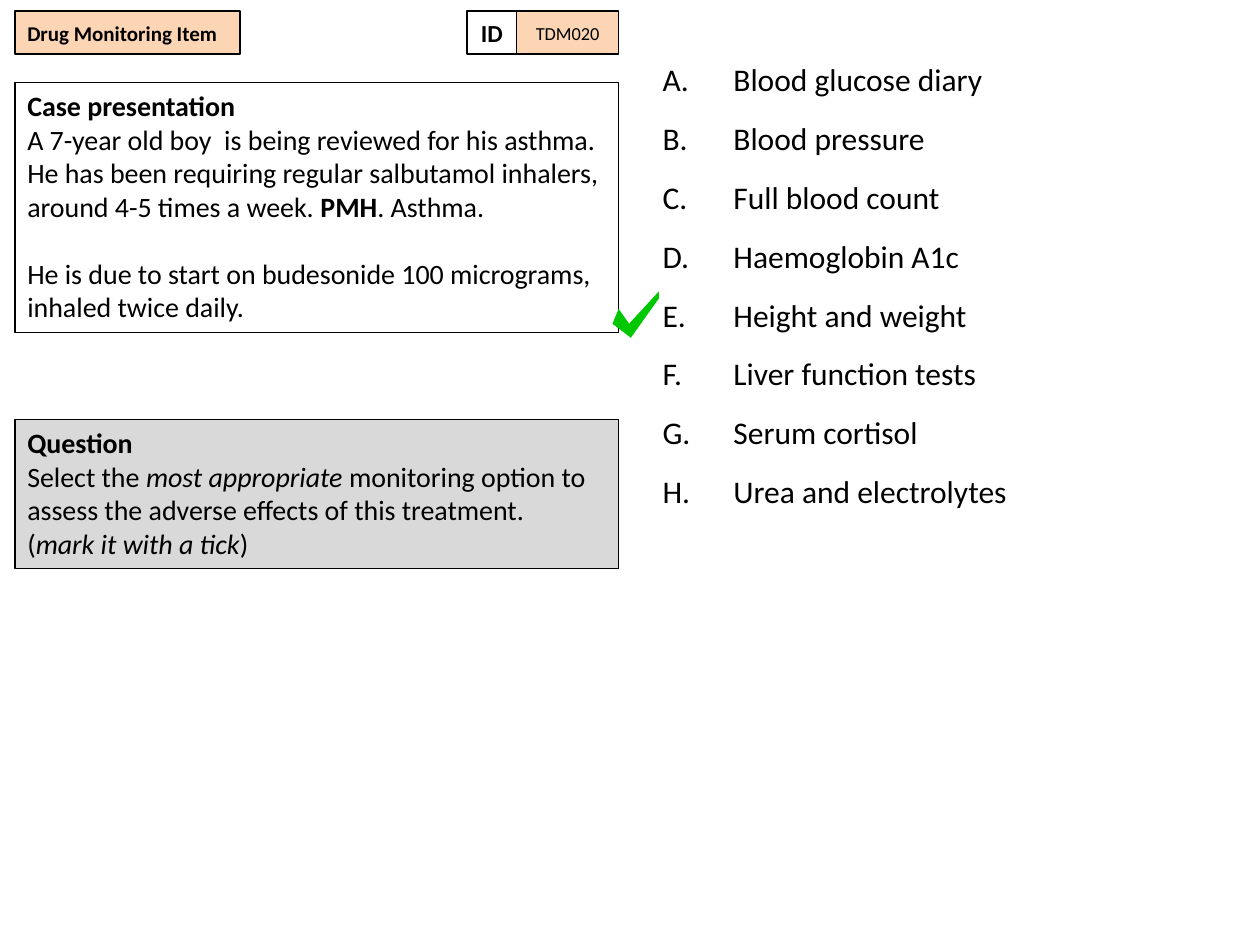
from dataclasses import dataclass

from lxml import etree
from pptx import Presentation
from pptx.dml.color import RGBColor
from pptx.enum.shapes import MSO_SHAPE
from pptx.enum.text import MSO_ANCHOR, MSO_AUTO_SIZE, PP_ALIGN
from pptx.oxml.ns import qn
from pptx.shapes.autoshape import Shape
from pptx.slide import Slide
from pptx.text.text import TextFrame
from pptx.util import Pt

RECTANGLE = MSO_SHAPE.RECTANGLE
TOP, MIDDLE = MSO_ANCHOR.TOP, MSO_ANCHOR.MIDDLE
LEFT, CENTER = PP_ALIGN.LEFT, PP_ALIGN.CENTER
GROW = MSO_AUTO_SIZE.SHAPE_TO_FIT_TEXT

FONT = "Calibri"
BLACK, PEACH, GREY, GREEN = "000000", "FCD5B5", "D9D9D9", "00C800"
MARGIN, COLUMN_WIDTH = 8.5, 345
HEADER_TOP, HEADER_HEIGHT = 6.5, 24.5
HANGING = 40.5


@dataclass(frozen=True)
class Span:
    text: str
    bold: bool = False
    italic: bool = False


@dataclass(frozen=True)
class Para:
    spans: tuple[Span, ...]
    space_before: float = 0


@dataclass(frozen=True)
class Panel:
    left: float
    top: float
    width: float
    height: float
    paras: tuple[Para, ...]
    size: float
    fill: str | None = None
    line_width: float = 1
    align: PP_ALIGN = LEFT
    anchor: MSO_ANCHOR = MIDDLE
    grow: bool = False


HEADERS = (
    Panel(MARGIN, HEADER_TOP, 128.5, HEADER_HEIGHT,
          (Para((Span("Drug Monitoring Item", bold=True),)),), 12, PEACH),
    Panel(295.2, HEADER_TOP, 58.3, HEADER_HEIGHT,
          (Para((Span("TDM020"),)),), 10.5, PEACH, align=CENTER),
    Panel(267, HEADER_TOP, 28.2, HEADER_HEIGHT,
          (Para((Span("ID", bold=True),)),), 14, align=CENTER),
)
CASE = Panel(MARGIN, 47, COLUMN_WIDTH, 143, (
    Para((Span("Case presentation", bold=True),)),
    Para((
        Span("A 7-year old boy  is being reviewed for his asthma. He has been requiring "
             "regular salbutamol inhalers, around 4-5 times a week. "),
        Span("PMH", bold=True),
        Span(". Asthma."),
    )),
    Para((Span("He is due to start on budesonide 100 micrograms, inhaled twice daily."),),
         space_before=19.2),
), 16, line_width=0.75, anchor=TOP, grow=True)
QUESTION = Panel(MARGIN, 239.75, COLUMN_WIDTH, 85, (
    Para((Span("Question", bold=True),)),
    Para((
        Span("Select the "),
        Span("most appropriate ", italic=True),
        Span("monitoring option to assess the adverse effects of this treatment."),
    )),
    Para((Span("("), Span("mark it with a tick", italic=True), Span(")"))),
), 16, GREY, line_width=0.75, anchor=TOP, grow=True)
OPTIONS = (
    "Blood glucose diary", "Blood pressure", "Full blood count", "Haemoglobin A1c",
    "Height and weight", "Liver function tests", "Serum cortisol", "Urea and electrolytes",
)
TICK = ((353.5, 176.5), (350, 185), (360.5, 193), (376.5, 170.5), (376.5, 166.5), (359.5, 185))


def color(value: str) -> RGBColor:
    """Turn a hex string into a colour."""
    return RGBColor.from_string(value)


def paint(shape: Shape, fill: str | None) -> None:
    """Set the fill of a shape and remove its shadow."""
    shape.shadow.inherit = False
    if fill is None:
        shape.fill.background()
    else:
        shape.fill.solid()
        shape.fill.fore_color.rgb = color(fill)


def write(frame: TextFrame, paras: tuple[Para, ...], size: float, align: PP_ALIGN) -> None:
    """Write paragraphs run by run into a text frame."""
    frame.word_wrap = True
    for index, para in enumerate(paras):
        paragraph = frame.add_paragraph() if index else frame.paragraphs[0]
        paragraph.alignment = align
        paragraph.space_before = Pt(para.space_before)
        for span in para.spans:
            run = paragraph.add_run()
            run.text = span.text
            run.font.name = FONT
            run.font.size = Pt(size)
            run.font.bold = span.bold
            run.font.italic = span.italic
            run.font.color.rgb = color(BLACK)


def draw_panel(page: Slide, panel: Panel) -> None:
    """Draw an outlined rectangle with its text."""
    box = page.shapes.add_shape(
        RECTANGLE, Pt(panel.left), Pt(panel.top), Pt(panel.width), Pt(panel.height))
    paint(box, panel.fill)
    box.line.color.rgb = color(BLACK)
    box.line.width = Pt(panel.line_width)
    box.text_frame.vertical_anchor = panel.anchor
    write(box.text_frame, panel.paras, panel.size, panel.align)
    if panel.grow:
        box.text_frame.auto_size = GROW


def draw_options(page: Slide, options: tuple[str, ...]) -> None:
    """Draw the lettered list of answers."""
    box = page.shapes.add_textbox(Pt(371.5), Pt(31), Pt(289.5), Pt(451.5))
    paras = tuple(Para((Span(option),), space_before=12) for option in options)
    write(box.text_frame, paras, 18, LEFT)
    for paragraph in box.text_frame.paragraphs:
        properties = paragraph._p.get_or_add_pPr()
        properties.set("marL", str(Pt(HANGING)))
        properties.set("indent", str(-Pt(HANGING)))
        etree.SubElement(properties, qn("a:buFont"), typeface=FONT)
        etree.SubElement(properties, qn("a:buAutoNum"), type="alphaUcPeriod")


def draw_tick(page: Slide, points: tuple[tuple[float, float], ...]) -> None:
    """Draw the tick that marks the answer."""
    start, *rest = [(Pt(x), Pt(y)) for x, y in points]
    builder = page.shapes.build_freeform(*start)
    builder.add_line_segments(rest, close=True)
    tick = builder.convert_to_shape()
    paint(tick, GREEN)
    tick.line.fill.background()


def main() -> None:
    """Build the drug monitoring slide."""
    deck = Presentation()
    deck.slide_width, deck.slide_height = Pt(720), Pt(540)
    page = deck.slides.add_slide(deck.slide_layouts[6])
    draw_options(page, OPTIONS)
    for panel in (*HEADERS, CASE, QUESTION):
        draw_panel(page, panel)
    draw_tick(page, TICK)
    deck.save("out.pptx")


if __name__ == "__main__":
    main()
